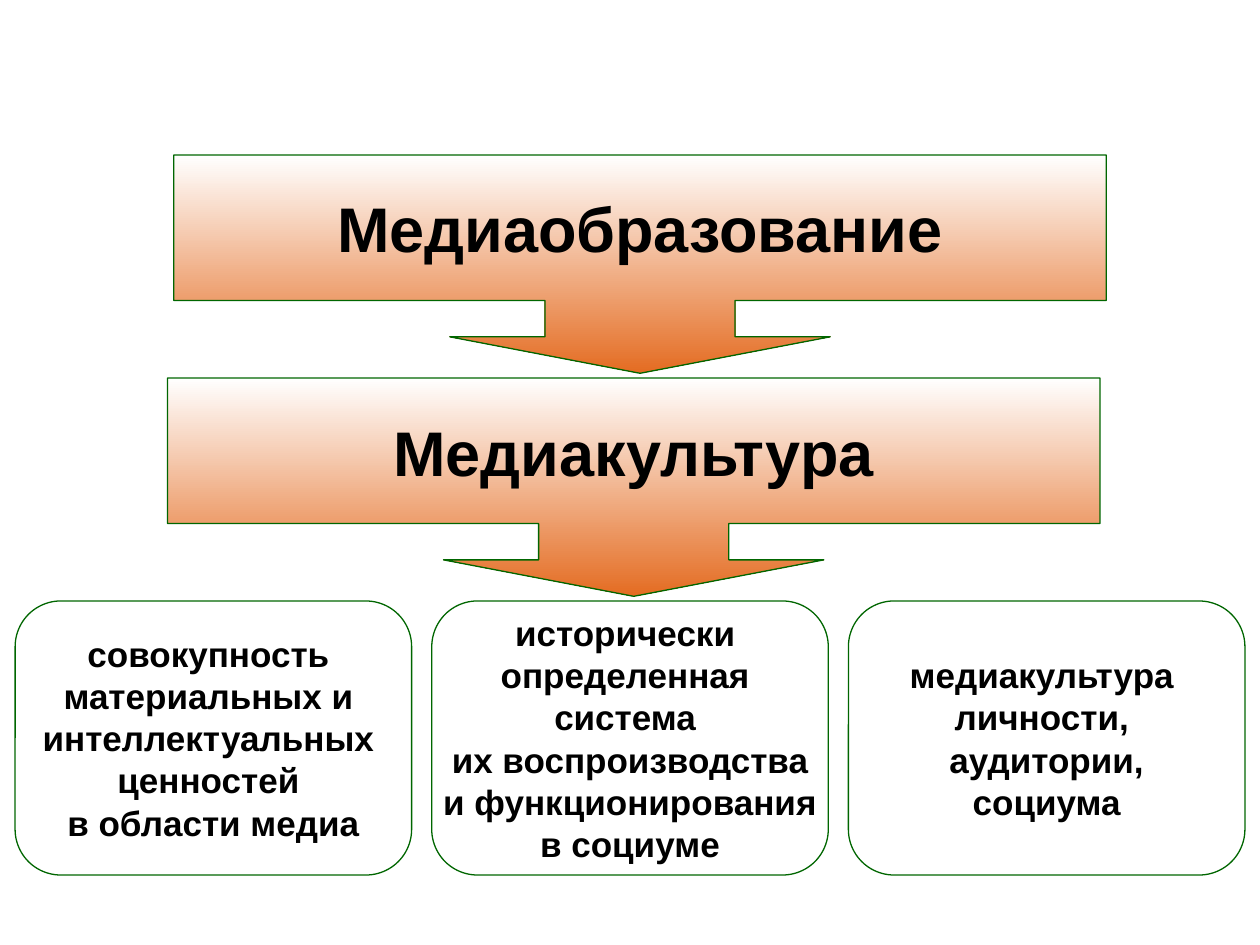
from pptx import Presentation
from pptx.dml.color import RGBColor
from pptx.enum.shapes import MSO_SHAPE
from pptx.enum.text import MSO_ANCHOR, PP_ALIGN
from pptx.util import Inches, Pt

BLACK = RGBColor(0x00, 0x00, 0x00)
WHITE = RGBColor(0xFF, 0xFF, 0xFF)
ORANGE = RGBColor(0xE4, 0x6C, 0x22)
GREEN = RGBColor(0x00, 0x66, 0x00)

PAGE_WIDTH, PAGE_HEIGHT = Inches(10), Inches(7.5)
BLANK_LAYOUT = 6

STAGES = [("Медиаобразование", 0.138), ("Медиакультура", 0.133)]
STAGE_TOP, STAGE_STEP = 0.164, 0.236
STAGE_WIDTH, STAGE_HEIGHT = 0.74, 0.231
ARROW_PROPORTIONS = (0.871, 0.871, 0.167, 0.667)

MEANINGS = [
    ["совокупность ", "материальных и ", "интеллектуальных ", "ценностей ", "в области медиа"],
    ["исторически ", "определенная ", "система ", "их воспроизводства",
     " и функционирования ", "в социуме"],
    ["медиакультура ", "личности, ", "аудитории,", "социума"],
]
ROW_BOX = (0.012, 0.636, 0.976, 0.29)
COLUMN_GAP = 0.016


def add_labelled_shape(page, kind, box, lines, size):
    left, top, width, height = box
    shape = page.shapes.add_shape(
        kind, int(left * PAGE_WIDTH), int(top * PAGE_HEIGHT),
        int(width * PAGE_WIDTH), int(height * PAGE_HEIGHT))
    shape.shadow.inherit = False
    shape.line.color.rgb = GREEN
    shape.line.width = Pt(0.75)
    frame = shape.text_frame
    frame.word_wrap = False
    frame.vertical_anchor = MSO_ANCHOR.MIDDLE
    frame.text = "\n".join(lines)
    for para in frame.paragraphs:
        para.alignment = PP_ALIGN.CENTER
        para.font.name = "Arial"
        para.font.size = Pt(size)
        para.font.bold = True
        para.font.color.rgb = BLACK
    return shape


def add_stage(page, box, title):
    callout = add_labelled_shape(page, MSO_SHAPE.DOWN_ARROW_CALLOUT, box, [title], 36)
    for index, share in enumerate(ARROW_PROPORTIONS):
        callout.adjustments[index] = share
    callout.fill.gradient()
    callout.fill.gradient_angle = 270
    for stop, color in zip(callout.fill.gradient_stops, (WHITE, ORANGE)):
        stop.color.rgb = color


def add_meanings(page, box, meanings):
    left, top, width, height = box
    column = (width - COLUMN_GAP * (len(meanings) - 1)) / len(meanings)
    for index, lines in enumerate(meanings):
        cell = (left + index * (column + COLUMN_GAP), top, column, height)
        card = add_labelled_shape(page, MSO_SHAPE.ROUNDED_RECTANGLE, cell, lines, 20)
        card.fill.background()


def main():
    deck = Presentation()
    deck.slide_width, deck.slide_height = PAGE_WIDTH, PAGE_HEIGHT
    page = deck.slides.add_slide(deck.slide_layouts[BLANK_LAYOUT])
    for index, (title, left) in enumerate(STAGES):
        top = STAGE_TOP + index * STAGE_STEP
        add_stage(page, (left, top, STAGE_WIDTH, STAGE_HEIGHT), title)
    add_meanings(page, ROW_BOX, MEANINGS)
    deck.save("out.pptx")


if __name__ == "__main__":
    main()
